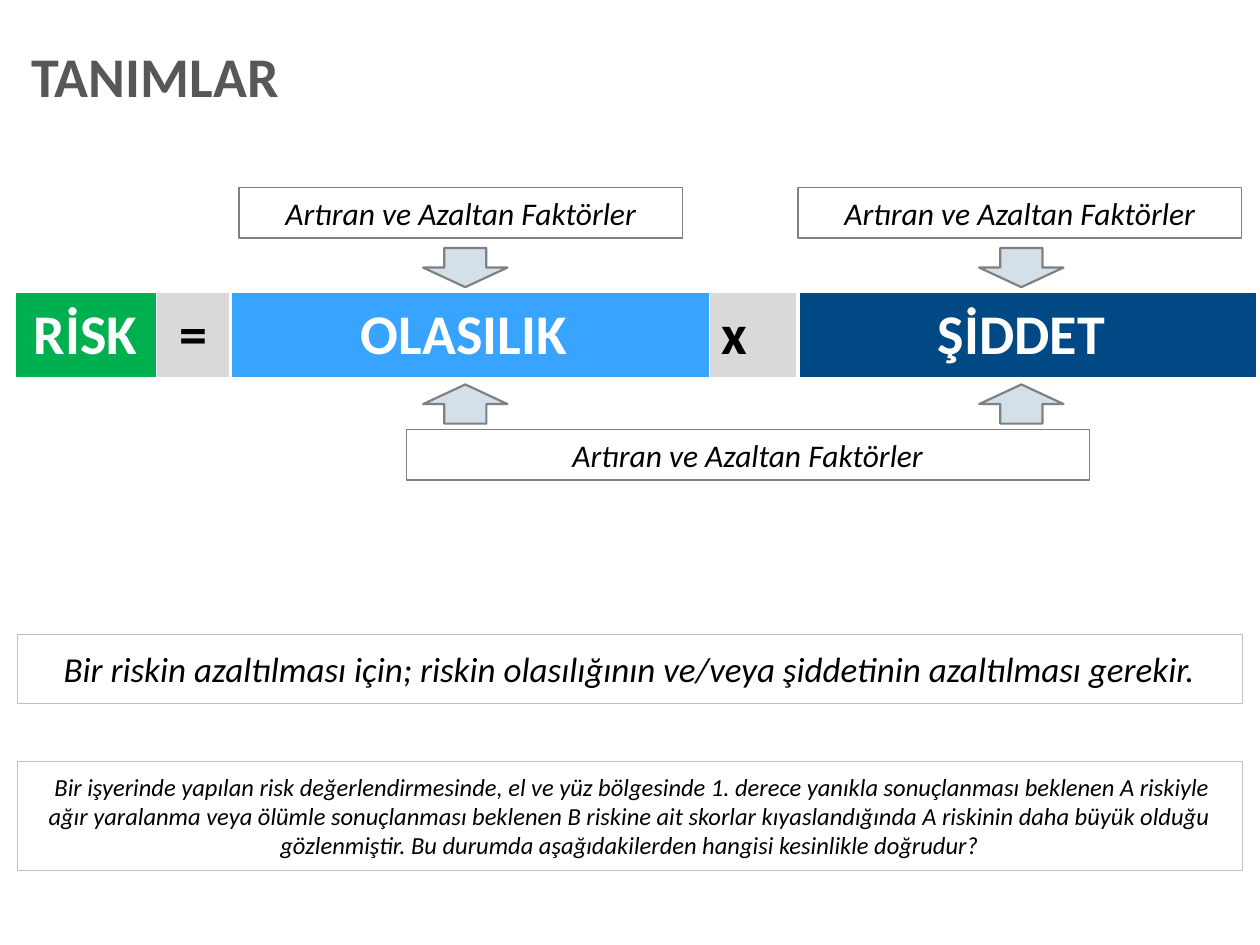
import dataclasses
import typing

import lxml.etree
import pptx
import pptx.dml.color
import pptx.enum.shapes
import pptx.enum.text
import pptx.oxml.ns
import pptx.util

Cm = pptx.util.Cm
Pt = pptx.util.Pt
Align = pptx.enum.text.PP_ALIGN
Anchor = pptx.enum.text.MSO_ANCHOR
Shape = pptx.enum.shapes.MSO_SHAPE

COLORS = {
    "title": "575757",
    "white": "FFFFFF",
    "black": "000000",
    "risk": "00B050",
    "operator": "D9D9D9",
    "probability": "38A4FF",
    "severity": "004985",
    "arrow": "D3DFE9",
    "outline": "808080",
    "pale_outline": "BFBFBF",
}
FACTORS = "Artıran ve Azaltan Faktörler"
BAND_TOP, BAND_HEIGHT = 5.89, 1.75
ARROW_WIDTH, ARROW_HEIGHT = 1.7, 0.79
BOX_HEIGHT = 1.02
WIDE_LEFT, WIDE_WIDTH = 0.34, 24.71


@dataclasses.dataclass
class Term:
    text: str
    width: float
    fill: str
    color: str = "white"
    align: Align = Align.CENTER


@dataclasses.dataclass
class Band:
    left: float
    terms: list[Term]


@dataclasses.dataclass
class Box:
    text: str
    left: float
    top: float
    width: float
    height: float = BOX_HEIGHT
    size: int = 18
    outline: str = "outline"
    line_width: float = 0.75
    anchor: Anchor = Anchor.TOP


@dataclasses.dataclass
class Arrow:
    left: float
    top: float
    rotation: int


BANDS = [
    Band(0.3, [Term("RİSK", 2.85, "risk"), Term("=", 1.48, "operator", "black")]),
    Band(4.67, [Term("OLASILIK ", 9.63, "probability"),
                Term("x", 1.76, "operator", "black", Align.LEFT)]),
    Band(16.11, [Term("ŞİDDET ", 9.22, "severity")]),
]
BOXES = [
    Box(FACTORS, 4.82, 3.78, 8.94),
    Box(FACTORS, 16.09, 3.78, 8.94),
    Box(FACTORS, 8.19, 8.66, 13.77),
    Box("Bir riskin azaltılması için; riskin olasılığının ve/veya şiddetinin "
        "azaltılması gerekir.",
        WIDE_LEFT, 12.78, WIDE_WIDTH, 1.4, 20, "pale_outline", 0.25, Anchor.MIDDLE),
    Box(" Bir işyerinde yapılan risk değerlendirmesinde, el ve yüz bölgesinde "
        "1. derece yanıkla sonuçlanması beklenen A riskiyle ağır yaralanma veya "
        "ölümle sonuçlanması beklenen B riskine ait skorlar kıyaslandığında "
        "A riskinin daha büyük olduğu gözlenmiştir. Bu durumda aşağıdakilerden "
        "hangisi kesinlikle doğrudur?",
        WIDE_LEFT, 15.34, WIDE_WIDTH, 2.21, 14, "pale_outline", 0.25, Anchor.MIDDLE),
]
ARROWS = [Arrow(left, top, rotation)
          for left in (8.53, 19.74)
          for top, rotation in ((5.0, 0), (7.75, 180))]


def rgb(name: str) -> pptx.dml.color.RGBColor:
    return pptx.dml.color.RGBColor.from_string(COLORS[name])


def set_font(paragraph: typing.Any, size: int, color: str,
             bold: bool = False, italic: bool = False) -> None:
    font = paragraph.font
    font.name = "Calibri"
    font.size = Pt(size)
    font.bold = bold
    font.italic = italic
    font.color.rgb = rgb(color)


def add_borders(cell: typing.Any) -> None:
    properties = cell._tc.get_or_add_tcPr()
    sides = (("lnL", 1), ("lnR", 1), ("lnT", 1), ("lnB", 3))
    for index, (side, width) in enumerate(sides):
        line = lxml.etree.Element(pptx.oxml.ns.qn(f"a:{side}"), w=str(Pt(width)))
        fill = lxml.etree.SubElement(line, pptx.oxml.ns.qn("a:solidFill"))
        lxml.etree.SubElement(fill, pptx.oxml.ns.qn("a:srgbClr"), val=COLORS["white"])
        properties.insert(index, line)


def add_band(slide: typing.Any, band: Band) -> None:
    width = sum(term.width for term in band.terms)
    table = slide.shapes.add_table(1, len(band.terms), Cm(band.left), Cm(BAND_TOP),
                                   Cm(width), Cm(BAND_HEIGHT)).table
    for index, term in enumerate(band.terms):
        table.columns[index].width = Cm(term.width)
        cell = table.cell(0, index)
        cell.fill.solid()
        cell.fill.fore_color.rgb = rgb(term.fill)
        cell.vertical_anchor = Anchor.MIDDLE
        add_borders(cell)
        paragraph = cell.text_frame.paragraphs[0]
        paragraph.text = term.text
        paragraph.alignment = term.align
        set_font(paragraph, 32, term.color, bold=True)


def add_box(slide: typing.Any, box: Box) -> None:
    shape = slide.shapes.add_shape(Shape.RECTANGLE, Cm(box.left), Cm(box.top),
                                   Cm(box.width), Cm(box.height))
    shape.shadow.inherit = False
    shape.fill.background()
    shape.line.color.rgb = rgb(box.outline)
    shape.line.width = Pt(box.line_width)
    frame = shape.text_frame
    frame.word_wrap = True
    frame.vertical_anchor = box.anchor
    paragraph = frame.paragraphs[0]
    paragraph.text = box.text
    paragraph.alignment = Align.CENTER
    set_font(paragraph, box.size, "black", italic=True)


def add_arrow(slide: typing.Any, arrow: Arrow) -> None:
    shape = slide.shapes.add_shape(Shape.DOWN_ARROW, Cm(arrow.left), Cm(arrow.top),
                                   Cm(ARROW_WIDTH), Cm(ARROW_HEIGHT))
    shape.rotation = arrow.rotation
    shape.shadow.inherit = False
    shape.fill.solid()
    shape.fill.fore_color.rgb = rgb("arrow")
    shape.line.color.rgb = rgb("outline")
    shape.line.width = Pt(1.25)


def add_title(slide: typing.Any, text: str) -> None:
    frame = slide.shapes.add_textbox(Cm(0.64), Cm(0.71), Cm(24.49), Cm(1.8)).text_frame
    frame.word_wrap = True
    frame.margin_left = frame.margin_right = 0
    frame.vertical_anchor = Anchor.MIDDLE
    paragraph = frame.paragraphs[0]
    paragraph.text = text
    paragraph.line_spacing = 0.9
    set_font(paragraph, 32, "title", bold=True)


def main() -> None:
    presentation = pptx.Presentation()
    presentation.slide_width = Cm(25.4)
    presentation.slide_height = Cm(19.05)
    slide = presentation.slides.add_slide(presentation.slide_layouts[6])

    add_title(slide, "TANIMLAR")
    for band in BANDS:
        add_band(slide, band)
    for arrow in ARROWS:
        add_arrow(slide, arrow)
    for box in BOXES:
        add_box(slide, box)
    presentation.save("out.pptx")


if __name__ == "__main__":
    main()
